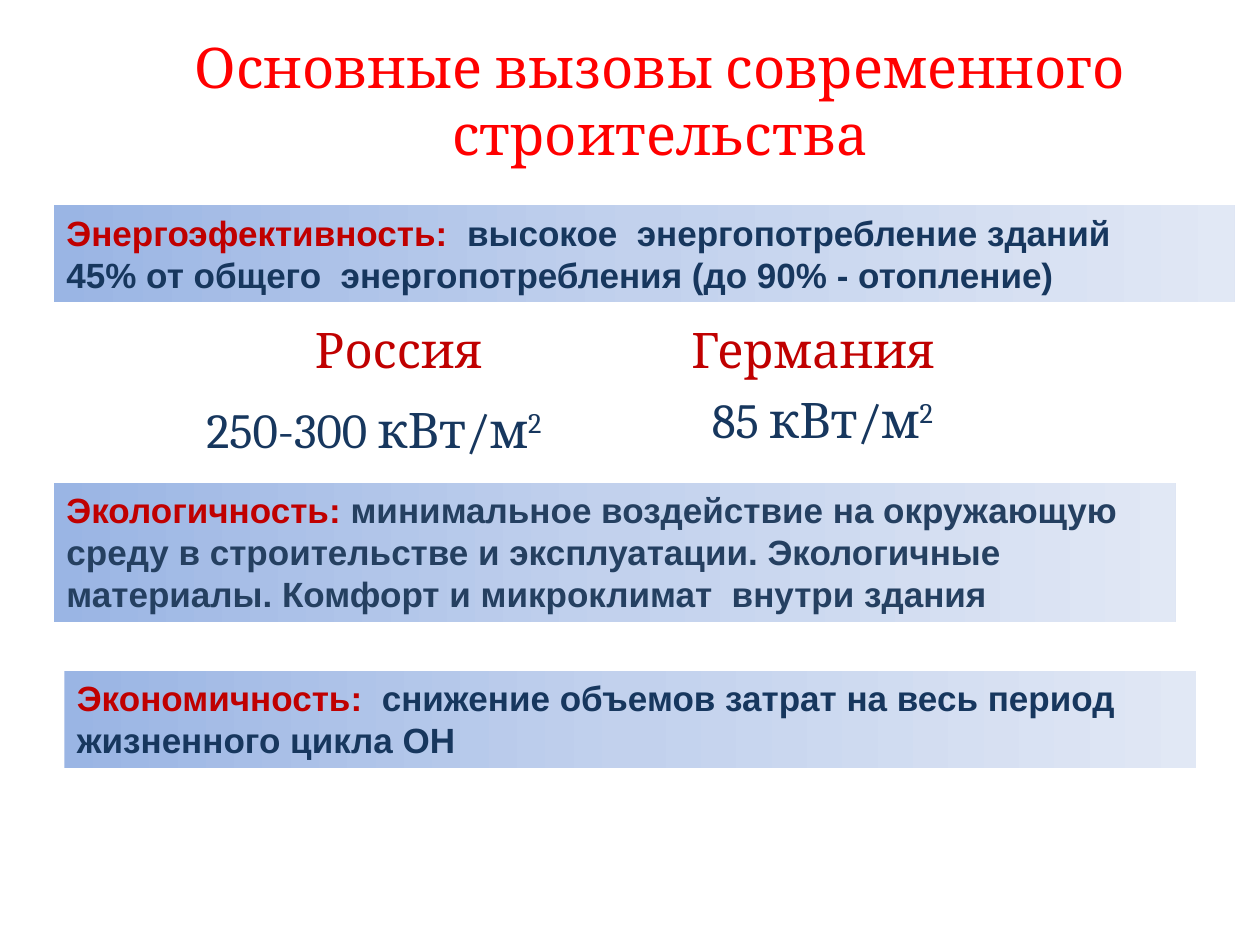
from copy import deepcopy
from dataclasses import dataclass

from pptx import Presentation
from pptx.dml.color import RGBColor as Rgb
from pptx.enum.shapes import MSO_SHAPE as Form
from pptx.enum.text import MSO_ANCHOR as Anchor, MSO_AUTO_SIZE as Fit, PP_ALIGN as Align
from pptx.oxml.ns import qn
from pptx.util import Cm, Pt

RED = Rgb(0xFF, 0x00, 0x00)
WINE = Rgb(0xC0, 0x00, 0x00)
NAVY = Rgb(0x17, 0x37, 0x5E)
SLATE = Rgb(0x25, 0x40, 0x61)
FADE = (
    (0, Rgb(0x9A, 0xB5, 0xE4)),
    (0.5, Rgb(0xC2, 0xD1, 0xED)),
    (1, Rgb(0xE1, 0xE8, 0xF5)),
)


@dataclass(frozen=True)
class Part:
    text: str
    color: Rgb
    raised: bool = False


@dataclass(frozen=True)
class Box:
    left: float
    top: float
    width: float
    height: float
    lines: tuple[tuple[Part, ...], ...]
    size: int = 28
    face: str = "Cambria"
    bold: bool = False
    align: Align = Align.LEFT

    def frame(self) -> tuple[Cm, Cm, Cm, Cm]:
        return Cm(self.left), Cm(self.top), Cm(self.width), Cm(self.height)


def band(left: float, top: float, width: float, height: float,
         *lines: tuple[Part, ...]) -> Box:
    return Box(left, top, width, height, lines, 20, "Arial", True)


def power(left: float, top: float, width: float, value: str) -> Box:
    line = (Part(f"{value} кВт/м", NAVY), Part("2", NAVY, True))
    return Box(left, top, width, 1.45, (line,))


def country(left: float, name: str) -> Box:
    return Box(left, 6.32, 7.01, 1.45, ((Part(name, WINE),),))


BANDS = (
    band(1.09, 9.73, 22.61, 2.82, (
        Part("Экологичность: ", WINE),
        Part("минимальное воздействие на окружающую среду в строительстве и "
             "эксплуатации. Экологичные материалы. Комфорт и микроклимат  "
             "внутри здания", SLATE))),
    band(1.09, 4.13, 23.8, 1.96,
         (Part("Энергоэфективность:  ", WINE),
          Part("высокое  энергопотребление зданий", NAVY)),
         (Part("45% от общего  энергопотребления (до 90% - отопление)", NAVY),)),
    band(1.3, 13.52, 22.81, 1.96, (
        Part("Экономичность:  ", WINE),
        Part("снижение объемов затрат на весь период жизненного цикла ОН", NAVY))),
)
LABELS = (
    Box(2.11, 0.53, 22.4, 3,
        ((Part("Основные вызовы современного строительства", RED),),),
        size=32, align=Align.CENTER),
    country(13.69, "Германия"),
    power(14.1, 7.72, 5.41, "85"),
    power(3.91, 7.92, 9.6, "250-300"),
    country(6.1, "Россия"),
)


def shade(shape) -> None:
    fill = shape.fill
    fill.gradient()
    fill.gradient_angle = 0
    first = next(shape._element.spPr.iter(qn("a:gs")))
    first.addnext(deepcopy(first))
    for stop, (place, color) in zip(fill.gradient_stops, FADE):
        stop.position = place
        stop.color.rgb = color


def write(shape, box: Box) -> None:
    frame = shape.text_frame
    frame.word_wrap = True
    frame.auto_size = Fit.SHAPE_TO_FIT_TEXT
    frame.vertical_anchor = Anchor.TOP
    for index, line in enumerate(box.lines):
        para = frame.add_paragraph() if index else frame.paragraphs[0]
        para.alignment = box.align
        for part in line:
            run = para.add_run()
            run.text = part.text
            font = run.font
            font.name = box.face
            font.size = Pt(box.size)
            font.bold = box.bold
            font.color.rgb = part.color
            if part.raised:
                run._r.get_or_add_rPr().set("baseline", "30000")


def draw_band(slide, box: Box) -> None:
    shape = slide.shapes.add_shape(Form.RECTANGLE, *box.frame())
    shape.shadow.inherit = False
    shape.line.fill.background()
    shade(shape)
    write(shape, box)


def draw_label(slide, box: Box) -> None:
    write(slide.shapes.add_textbox(*box.frame()), box)


def main() -> None:
    deck = Presentation()
    deck.slide_width = Cm(25.4)
    deck.slide_height = Cm(19.05)
    slide = deck.slides.add_slide(deck.slide_layouts[6])
    for box in BANDS:
        draw_band(slide, box)
    for box in LABELS:
        draw_label(slide, box)
    deck.save("out.pptx")


if __name__ == "__main__":
    main()
